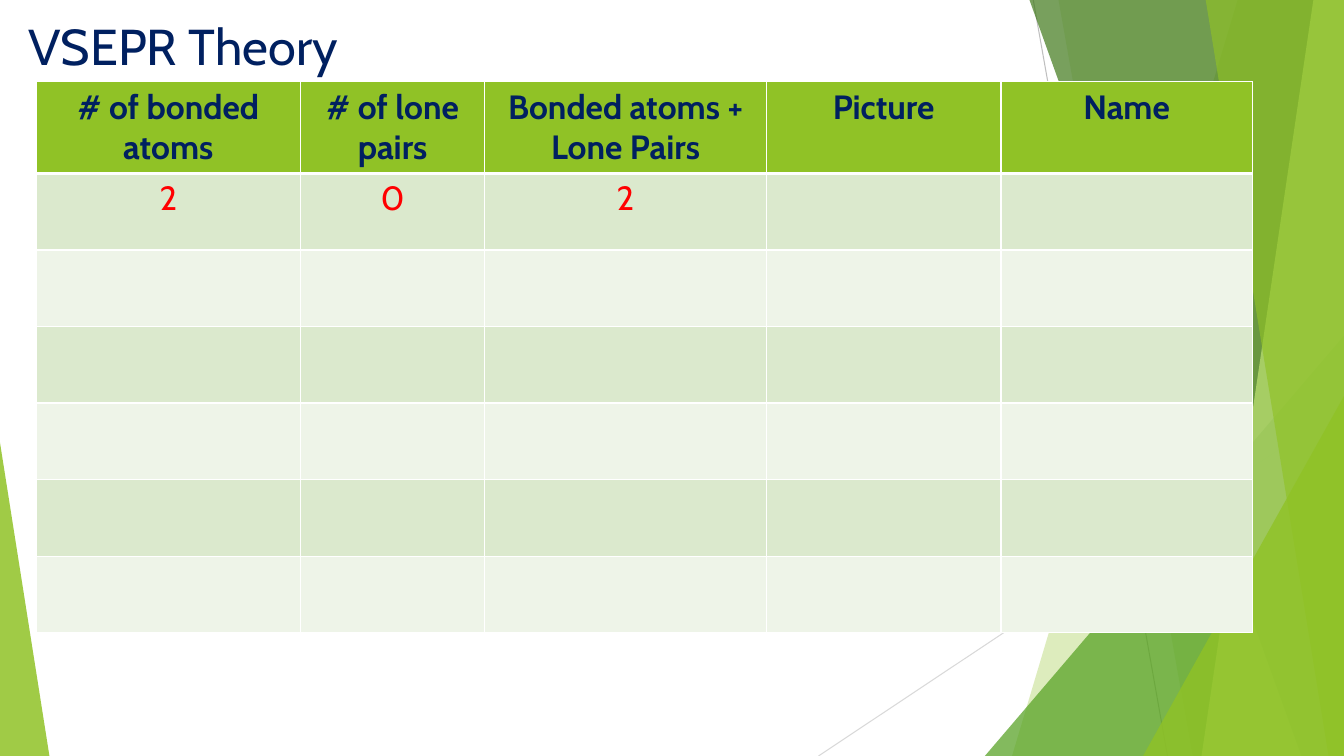
from lxml import etree
from pptx import Presentation, util as u
from pptx.dml.color import RGBColor
from pptx.enum import shapes, text
from pptx.oxml import ns

NAVY = RGBColor(0x00, 0x20, 0x60)
RED = RGBColor(0xFF, 0x00, 0x00)
WHITE = RGBColor(0xFF, 0xFF, 0xFF)
GREEN = RGBColor(0x90, 0xC2, 0x26)
LEAF = RGBColor(0x54, 0xA0, 0x21)
FOREST = RGBColor(0x3F, 0x78, 0x19)
LIME = RGBColor(0xC0, 0xE4, 0x74)
BAND = RGBColor(0xDB, 0xE9, 0xCD)
PALE = RGBColor(0xEE, 0xF4, 0xE8)
GRAY = RGBColor(0xBF, 0xBF, 0xBF)
SILVER = RGBColor(0xD9, 0xD9, 0xD9)

HEADERS = ["# of bonded atoms", "# of lone pairs", "Bonded atoms + Lone Pairs", "Picture", "Name"]
COUNTS = ["2", "0", "2", "", ""]
COLUMN_WIDTHS = [19.65, 13.73, 20.93, 17.48, 18.68]
BODY_ROWS = 6


def write(frame, content, *, size, color, bold=False, align=text.PP_ALIGN.LEFT, font="Cabin"):
    """Put one formatted paragraph into a text frame."""
    para = frame.paragraphs[0]
    para.alignment = align
    span = para.add_run()
    span.text = content
    span.font.name = font
    span.font.size = u.Pt(size)
    span.font.bold = bold
    span.font.color.rgb = color


class Page:
    """Draw on one slide, with lengths in percent of its width and height."""

    def __init__(self, deck):
        self.width, self.height = deck.slide_width, deck.slide_height
        self.slide = deck.slides.add_slide(deck.slide_layouts[5])
        self.shapes = self.slide.shapes

    def x(self, share):
        return u.Emu(round(self.width * share / 100))

    def y(self, share):
        return u.Emu(round(self.height * share / 100))

    def line(self, start, end, color):
        line = self.shapes.add_connector(
            shapes.MSO_CONNECTOR.STRAIGHT,
            self.x(start[0]), self.y(start[1]), self.x(end[0]), self.y(end[1]))
        line.line.color.rgb = color
        line.line.width = u.Pt(0.75)
        etree.SubElement(line._element.spPr, ns.qn("a:effectLst"))

    def paint(self, shape, color, opacity):
        shape.shadow.inherit = False
        shape.line.fill.background()
        shape.fill.solid()
        shape.fill.fore_color.rgb = color
        tint = shape._element.spPr.find(".//" + ns.qn("a:srgbClr"))
        etree.SubElement(tint, ns.qn("a:alpha"), val=str(opacity * 1000))

    def ribbon(self, top_left, bottom_left, color, opacity):
        top = self.y(-0.1)
        builder = self.shapes.build_freeform(self.x(top_left), top)
        builder.add_line_segments([
            (self.x(100), top), (self.x(100), self.y(100)), (self.x(bottom_left), self.y(100))])
        self.paint(builder.convert_to_shape(), color, opacity)

    def triangle(self, left, top, width, apex, color, opacity):
        triangle = self.shapes.add_shape(
            shapes.MSO_SHAPE.ISOSCELES_TRIANGLE,
            self.x(left), self.y(top), self.x(width), self.y(100 - top))
        triangle.adjustments[0] = apex
        self.paint(triangle, color, opacity)

    def title(self, content, left, top, width, height):
        box = self.shapes.title
        box.left, box.top = self.x(left), self.y(top)
        box.width, box.height = self.x(width), self.y(height)
        box.text_frame.word_wrap = True
        box.text_frame.vertical_anchor = text.MSO_ANCHOR.TOP
        write(box.text_frame, content, size=36, color=NAVY)
        self.shapes._spTree.append(box._element)

    def cell(self, cell, content, fill, color, bold, top=1, bottom=1):
        properties = cell._tc.get_or_add_tcPr()
        for side, points in (("L", 1), ("R", 1), ("T", top), ("B", bottom)):
            border = etree.SubElement(properties, ns.qn(f"a:ln{side}"), w=str(u.Pt(points)))
            paint = etree.SubElement(border, ns.qn("a:solidFill"))
            etree.SubElement(paint, ns.qn("a:srgbClr"), val=str(WHITE))
        cell.fill.solid()
        cell.fill.fore_color.rgb = fill
        if content:
            write(cell.text_frame, content, size=24, color=color, bold=bold,
                  align=text.PP_ALIGN.CENTER)

    def table(self, rows, left, top, widths, row_height):
        table = self.shapes.add_table(
            len(rows), len(widths), self.x(left), self.y(top),
            self.x(sum(widths)), self.y(row_height * len(rows))).table
        for column, width in zip(table.columns, widths):
            column.width = self.x(width)
        for index, row in enumerate(rows):
            table.rows[index].height = self.y(row_height)
            for column, content in enumerate(row):
                cell = table.cell(index, column)
                if index == 0:
                    self.cell(cell, content, GREEN, NAVY, True, bottom=3)
                else:
                    self.cell(cell, content, BAND if index % 2 else PALE, RED, False,
                              top=3 if index == 1 else 1)


def main():
    deck = Presentation()
    deck.slide_width, deck.slide_height = u.Inches(13.33), u.Inches(7.5)
    page = Page(deck)

    page.line((76.88, 0), (86.87, 100), GRAY)
    page.line((100, 53.73), (60.9, 100), SILVER)
    page.ribbon(92.1, 75.3, GREEN, 30)
    page.ribbon(78.75, 88.73, GREEN, 20)
    page.triangle(73.28, 44.4, 26.72, 1, LEAF, 72)
    page.ribbon(76.58, 96.83, FOREST, 70)
    page.ribbon(97.73, 89.4, LIME, 70)
    page.ribbon(89.7, 98.85, GREEN, 65)
    page.triangle(85.05, 52.4, 14.95, 1, GREEN, 80)
    page.triangle(0, 58.53, 3.68, 0, GREEN, 85)

    page.title("VSEPR Theory", 1.35, 1.33, 70.5, 19.2)
    blank_rows = [[""] * len(HEADERS)] * (BODY_ROWS - 1)
    page.table([HEADERS, COUNTS, *blank_rows], 2.7, 10.8, COLUMN_WIDTHS, 10.13)
    deck.save("out.pptx")


if __name__ == "__main__":
    main()
